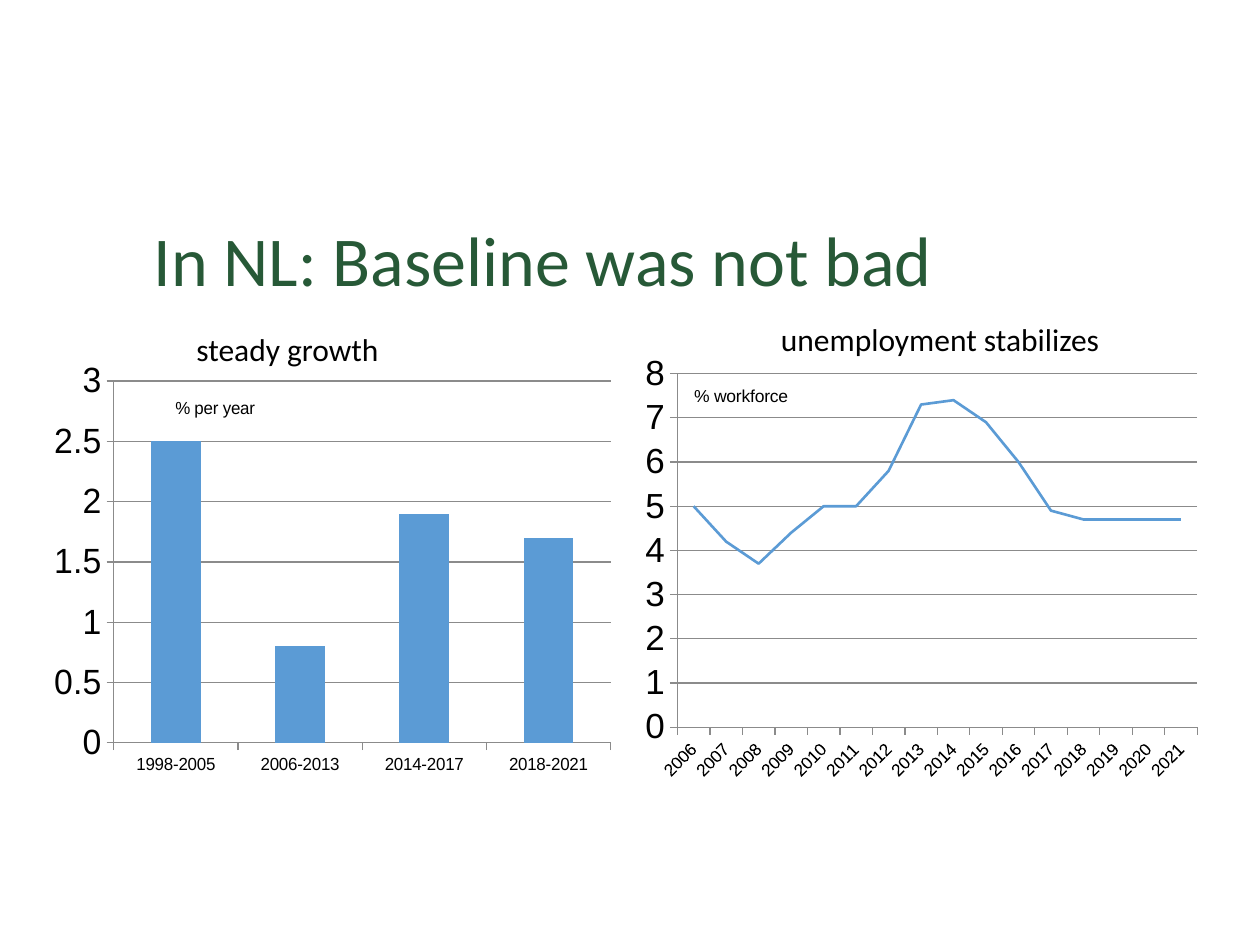
"""Build a slide on Dutch growth and unemployment, with two charts."""
from lxml import etree
from pptx import Presentation
from pptx.chart.data import CategoryChartData
from pptx.dml.color import RGBColor
from pptx.enum import chart as kinds, text
from pptx.oxml.ns import qn
from pptx.util import Pt

GREEN = RGBColor(0x27, 0x59, 0x37)
BLACK = RGBColor(0, 0, 0)
BLUE = RGBColor(0x5B, 0x9B, 0xD5)
GREY = RGBColor(0x8B, 0x8B, 0x8B)


def style(item, **values):
    for name, value in values.items():
        setattr(item, name, value)


def place(owner, index, **values):
    for old in owner.findall(qn("c:layout")):
        owner.remove(old)
    layout = etree.Element(qn("c:layout"))
    manual = etree.SubElement(layout, qn("c:manualLayout"))
    for name, value in values.items():
        etree.SubElement(manual, qn("c:" + name)).set("val", str(value))
    owner.insert(index, layout)


deck = Presentation()
style(deck, slide_width=Pt(720), slide_height=Pt(540))
slide = deck.slides.add_slide(deck.slide_layouts[6])

labels = [
    ("In NL: Baseline was not bad", (8.64, 105.84, 702.72, 70), 40, GREEN,
     dict(word_wrap=True, margin_left=Pt(79.2),
          vertical_anchor=text.MSO_ANCHOR.BOTTOM), 0.9),
    ("steady growth", (105.12, 185.04, 192.96, 28.8), 18, BLACK,
     dict(word_wrap=True), 1),
    ("unemployment stabilizes", (439.2, 179.28, 198.72, 28.8), 18, BLACK,
     dict(word_wrap=False), 1),
]

graphs = [
    dict(kind=kinds.XL_CHART_TYPE.COLUMN_CLUSTERED,
         box=(30.96, 196.56, 323.28, 311.04),
         cats=["1998-2005", "2006-2013", "2014-2017", "2018-2021"],
         vals=[2.5, 0.8, 1.9, 1.7], unit="% per year", spot=(0.18, 0.09),
         plot=(0.073, 0.068, 0.91, 0.665), top=3, step=0.5, turn=0),
    dict(kind=kinds.XL_CHART_TYPE.LINE,
         box=(365.76, 202.32, 323.28, 293.76),
         cats=[str(year) for year in range(2006, 2022)],
         vals=[5, 4.2, 3.7, 4.4, 5, 5, 5.8, 7.3, 7.4, 6.9, 6, 4.9]
         + [4.7] * 4, unit="% workforce", spot=(0.09, 0.05),
         plot=(0.066, 0.034, 0.919, 0.691), top=8, step=1, turn=-45),
]

for graph in graphs:
    data = CategoryChartData()
    data.categories = graph["cats"]
    data.add_series("Series 1", graph["vals"])
    frame = slide.shapes.add_chart(
        graph["kind"], *map(Pt, graph["box"]), data)
    chart = frame.chart
    style(chart, has_title=False, has_legend=False)
    style(chart.font, name="Arial", size=Pt(20))
    chart.font.color.rgb = BLACK

    plot = chart.plots[0]
    plot.vary_by_categories = False
    series = plot.series[0]
    if graph["kind"] == kinds.XL_CHART_TYPE.LINE:
        series.smooth = False
        series.marker.style = kinds.XL_MARKER_STYLE.NONE
        series.format.line.width = Pt(1.5)
        series.format.line.color.rgb = BLUE
    else:
        plot.gap_width = 150
        series.format.fill.solid()
        series.format.fill.fore_color.rgb = BLUE

    base, scale = chart.category_axis, chart.value_axis
    style(base, has_major_gridlines=False)
    style(scale, has_major_gridlines=True, minimum_scale=0,
          maximum_scale=graph["top"], major_unit=graph["step"])
    for axis in (base, scale):
        axis.major_tick_mark = kinds.XL_TICK_MARK.OUTSIDE
        axis.minor_tick_mark = kinds.XL_TICK_MARK.NONE
    for item in (base, scale, scale.major_gridlines):
        item.format.line.width = Pt(0.75)
        item.format.line.color.rgb = GREY
    base.tick_labels.font.size = Pt(10)
    turn = base._element.find(qn("c:txPr")).find(qn("a:bodyPr"))
    turn.set("rot", str(graph["turn"] * 60000))

    title = scale.axis_title
    title.text_frame.text = graph["unit"]
    font = title.text_frame.paragraphs[0].runs[0].font
    style(font, name="Arial", size=Pt(10), bold=False)
    font.color.rgb = BLACK
    head = title._element
    head.find(".//" + qn("a:bodyPr")).set("rot", "0")
    left, top = graph["spot"]
    place(head, 1, xMode="edge", yMode="edge", x=left, y=top)
    left, top, width, height = graph["plot"]
    area = chart._chartSpace.find(".//" + qn("c:plotArea"))
    place(area, 0, layoutTarget="inner", xMode="edge", yMode="edge",
          x=left, y=top, w=width, h=height)

for words, box, size, color, format, space in labels:
    frame = slide.shapes.add_textbox(*map(Pt, box)).text_frame
    style(frame, **format)
    line = frame.paragraphs[0]
    line.line_spacing = space
    run = line.add_run()
    run.text = words
    style(run.font, name="Calibri", size=Pt(size))
    run.font.color.rgb = color

deck.save("out.pptx")
